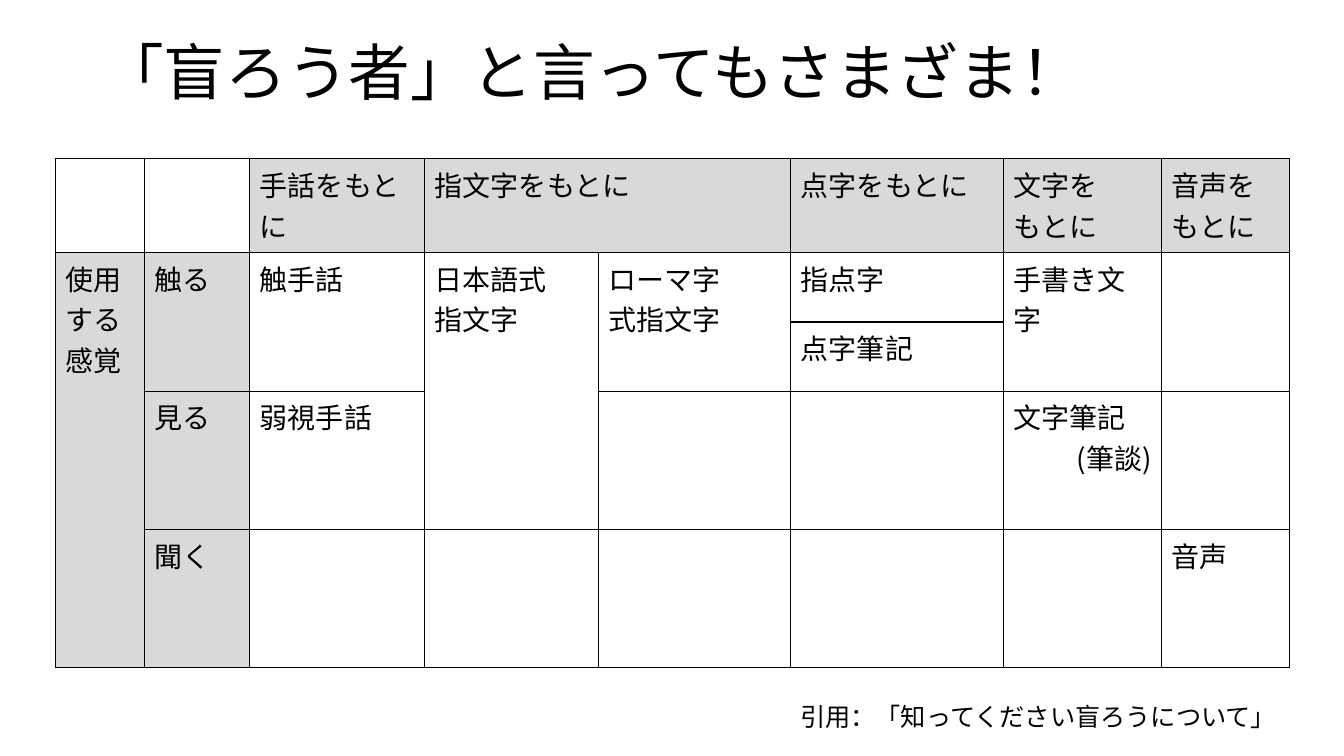
from dataclasses import dataclass

from lxml.etree import SubElement
from pptx import Presentation
from pptx.dml.color import RGBColor
from pptx.enum.text import MSO_ANCHOR, MSO_AUTO_SIZE, PP_ALIGN
from pptx.oxml.ns import qn
from pptx.util import Pt


@dataclass(frozen=True)
class Theme:
    """Colours, font and type sizes."""
    font: str = "Noto Sans CJK JP"
    ink: str = "000000"
    shade: str = "D9D9D9"
    title: int = 44
    body: int = 20
    source: int = 18
    border: int = 1


class Deck:
    """Holds the theme and the current slide, and adds elements to it."""

    def __init__(self, prs, theme):
        """Start one blank slide."""
        self.theme = theme
        self.s = prs.slides.add_slide(prs.slide_layouts[6])

    def set_text(self, tf, text, size):
        """Fill a text frame, one paragraph a line, and format its runs."""
        tf.text = text
        for p in tf.paragraphs:
            for r in p.runs:
                r.font.size = Pt(size)
                r.font.color.rgb = RGBColor.from_string(self.theme.ink)
                r.font.name = self.theme.font
                SubElement(r.font._element, qn("a:ea"), typeface=self.theme.font)

    def text(self, box, text, size, anchor=MSO_ANCHOR.TOP, spacing=None, grow=False):
        """Add a wrapping text box."""
        tf = self.s.shapes.add_textbox(*map(Pt, box)).text_frame
        tf.word_wrap = True
        tf.vertical_anchor = anchor
        tf.auto_size = MSO_AUTO_SIZE.SHAPE_TO_FIT_TEXT if grow else MSO_AUTO_SIZE.NONE
        self.set_text(tf, text, size)
        tf.paragraphs[0].line_spacing = spacing

    def cell(self, cell, text, shaded):
        """Letter, outline and fill one table cell."""
        tc_pr = cell._tc.get_or_add_tcPr()
        for side in ("lnL", "lnR", "lnT", "lnB"):
            ln = SubElement(tc_pr, qn(f"a:{side}"), w=str(Pt(self.theme.border)))
            fill = SubElement(ln, qn("a:solidFill"))
            SubElement(fill, qn("a:srgbClr"), val=self.theme.ink)
        if shaded:
            cell.fill.solid()
            cell.fill.fore_color.rgb = RGBColor.from_string(self.theme.shade)
        else:
            cell.fill.background()
        if text:
            self.set_text(cell.text_frame, text, self.theme.body)

    def table(self, left, top, widths, heights, texts, spans):
        """Add a table with shaded headings and merged cells."""
        box = (left, top, sum(widths), sum(heights))
        tbl = self.s.shapes.add_table(len(heights), len(widths), *map(Pt, box)).table
        tbl.first_row = tbl.horz_banding = False
        for col, width in zip(tbl.columns, widths):
            col.width = Pt(width)
        for row, height in zip(tbl.rows, heights):
            row.height = Pt(height)
        for i, row in enumerate(texts):
            for j, text in enumerate(row):
                self.cell(tbl.cell(i, j), text, (i == 0) != (j < 2))
        for first, last in spans:
            tbl.cell(*first).merge(tbl.cell(*last))
        return tbl


WIDTHS = [64, 75, 125, 124, 137.5, 152, 113, 91]
HEIGHTS = [67, 49.5, 49.5, 98.75, 98.75]
TEXTS = [
    ["", "", "手話をもとに", "指文字をもとに", "", "点字をもとに", "文字を\nもとに", "音声を\nもとに"],
    ["使用する感覚", "触る", "触手話", "日本語式\n指文字", "ローマ字\n式指文字", "指点字", "手書き文字", ""],
    ["", "", "", "", "", "点字筆記", "", ""],
    ["", "見る", "弱視手話", "", "", "", "文字筆記\n(筆談)", ""],
    ["", "聞く", "", "", "", "", "", "音声"],
]
SPANS = [((0, 3), (0, 4)), ((1, 0), (4, 0)), ((1, 3), (3, 3))]
SPANS += [((1, j), (2, j)) for j in (1, 2, 4, 6, 7)]


def main():
    """Build the slide and save it."""
    prs = Presentation()
    prs.slide_width, prs.slide_height = Pt(960), Pt(540)
    theme = Theme()
    deck = Deck(prs, theme)
    deck.text((66, 14, 828, 80), "「盲ろう者」と言ってもさまざま！", theme.title,
              anchor=MSO_ANCHOR.MIDDLE, spacing=0.9)
    tbl = deck.table(39.5, 113.5, WIDTHS, HEIGHTS, TEXTS, SPANS)
    tbl.cell(1, 0)._tc.get_or_add_tcPr().set("vert", "eaVert")
    tbl.cell(3, 6).text_frame.paragraphs[1].alignment = PP_ALIGN.RIGHT
    deck.text((564.5, 497.5, 379.5, 29), "引用：「知ってください盲ろうについて」",
              theme.source, grow=True)
    prs.save("out.pptx")


if __name__ == "__main__":
    main()
